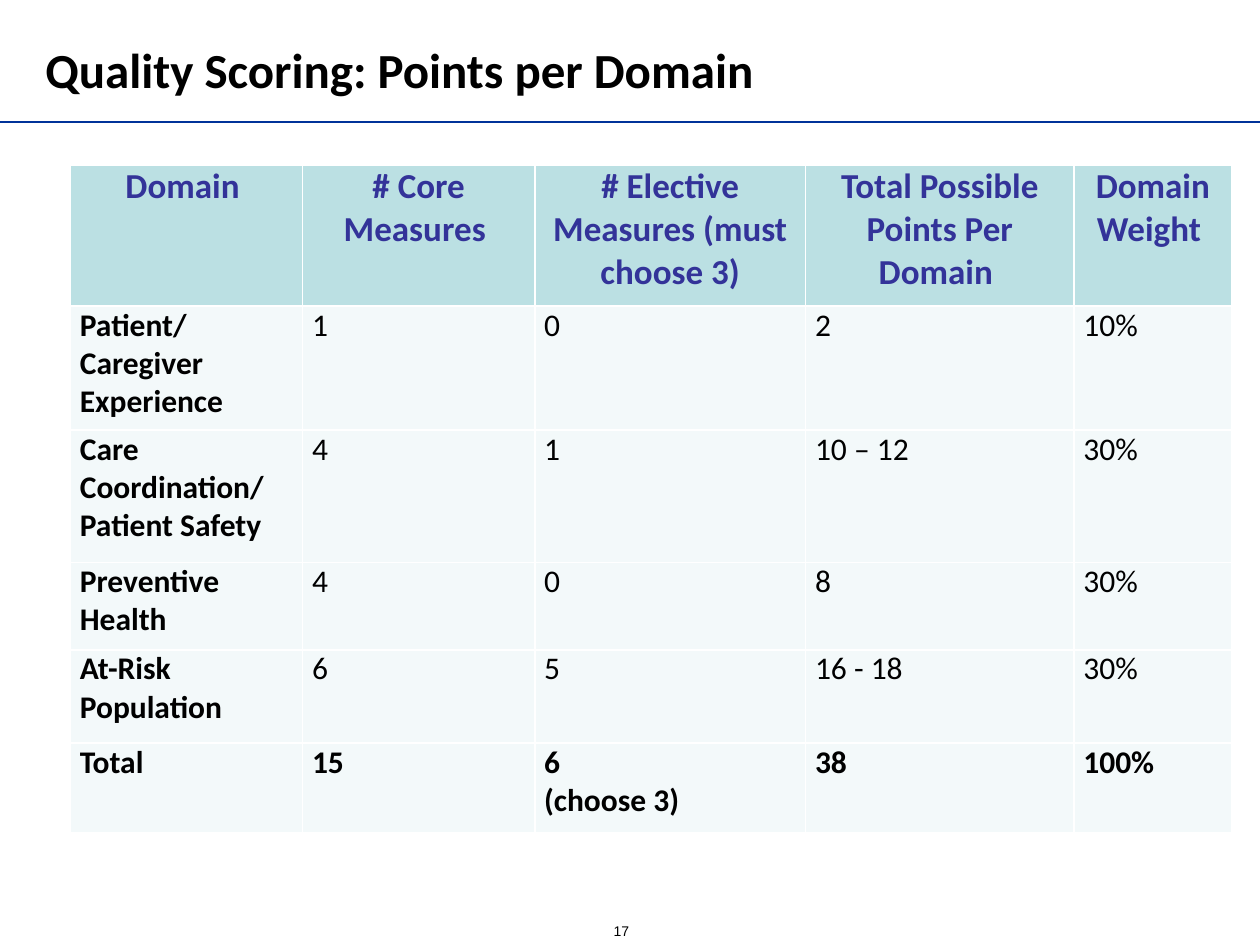
"""Build the slide on quality points per domain."""
from lxml import etree
from pptx import Presentation
from pptx.dml.color import RGBColor
from pptx.enum.shapes import MSO_CONNECTOR
from pptx.enum.text import MSO_ANCHOR, MSO_AUTO_SIZE, PP_ALIGN
from pptx.oxml.ns import qn
from pptx.util import Cm, Pt

LINE = MSO_CONNECTOR.STRAIGHT
MIDDLE = MSO_ANCHOR.MIDDLE
GROW = MSO_AUTO_SIZE.SHAPE_TO_FIT_TEXT
NO_FIT = MSO_AUTO_SIZE.NONE
LEFT, CENTER = PP_ALIGN.LEFT, PP_ALIGN.CENTER

TITLE = "Quality Scoring: Points per Domain"
NUMBER = "17"
HEAD = ["Domain ", "# Core Measures ", "# Elective Measures (must choose 3)",
        "Total Possible Points Per Domain ", "Domain Weight "]
DOMAINS = [
    ["Patient/ Caregiver Experience", "1", "0", "2", "10%"],
    ["Care Coordination/ Patient Safety", "4", "1", "10 – 12", "30%"],
    ["Preventive Health", "4", "0", "8", "30%"],
    ["At-Risk Population", "6", "5", "16 - 18", "30%"],
]
TOTAL = ["Total", "15", "6\n(choose 3)", "38", "100%"]
WIDTHS = [4.68, 4.68, 5.46, 5.41, 3.18]
HEIGHTS = [2.84, 2.5, 2.67, 1.76, 1.88, 1.8]

BLACK, WHITE, RULE = "000000", "FFFFFF", "003399"
HEAD_INK, HEAD_FILL, BODY_FILL = "333399", "BBE0E3", "F3F9FA"


def color(code):
    return RGBColor.from_string(code)


def write(frame, text, size, ink=BLACK, bold=False, face="Calibri", align=LEFT):
    for i, line in enumerate(text.split("\n")):
        para = frame.add_paragraph() if i else frame.paragraphs[0]
        para.alignment = align
        run = para.add_run()
        run.text = line
        font = run.font
        font.name, font.size, font.bold = face, Pt(size), bold
        font.color.rgb = color(ink)


def border(cell, code, width):
    props = cell._tc.get_or_add_tcPr()
    for i, side in enumerate(("lnL", "lnR", "lnT", "lnB")):
        edge = etree.Element(qn("a:" + side), w=str(Pt(width)))
        fill = etree.SubElement(edge, qn("a:solidFill"))
        etree.SubElement(fill, qn("a:srgbClr"), val=code)
        props.insert(i, edge)


def add_title(slide):
    title = slide.shapes.title
    title.left, title.top = Cm(0.66), Cm(0.36)
    title.width, title.height = Cm(19.3), Cm(2.06)
    frame = title.text_frame
    frame.vertical_anchor, frame.auto_size = MIDDLE, NO_FIT
    write(frame, TITLE, 28, bold=True)


def add_rule(slide, width):
    rule = slide.shapes.add_connector(LINE, 0, Cm(2.46), width, Cm(2.46))
    rule.line.color.rgb = color(RULE)
    rule.line.width = Pt(1.5)
    etree.SubElement(rule._element.spPr, qn("a:effectLst"))


def add_number(slide):
    box = slide.shapes.add_textbox(Cm(12.12), Cm(18.47), Cm(0.86), Cm(0.58))
    frame = box.text_frame
    frame.word_wrap, frame.auto_size = False, GROW
    write(frame, NUMBER, 8, face="Arial")


def add_scores(slide):
    rows = [HEAD, *DOMAINS, TOTAL]
    table = slide.shapes.add_table(
        len(rows), len(HEAD), Cm(1.42), Cm(3.33),
        Cm(sum(WIDTHS)), Cm(sum(HEIGHTS))).table
    for col, width in zip(table.columns, WIDTHS):
        col.width = Cm(width)
    for r, (row, height) in enumerate(zip(rows, HEIGHTS)):
        table.rows[r].height = Cm(height)
        for c, text in enumerate(row):
            cell = table.cell(r, c)
            cell.margin_left = cell.margin_right = Cm(0.19)
            cell.margin_top = cell.margin_bottom = 0
            cell.fill.solid()
            cell.fill.fore_color.rgb = color(BODY_FILL if r else HEAD_FILL)
            border(cell, WHITE, 1)
            if row is HEAD:
                write(cell.text_frame, text, 20, HEAD_INK, True, align=CENTER)
            else:
                write(cell.text_frame, text, 18, bold=c == 0 or row is TOTAL)


def main():
    deck = Presentation()
    deck.slide_width, deck.slide_height = Cm(25.4), Cm(19.05)
    slide = deck.slides.add_slide(deck.slide_layouts[5])
    add_rule(slide, deck.slide_width)
    add_number(slide)
    add_scores(slide)
    add_title(slide)
    deck.save("out.pptx")


if __name__ == "__main__":
    main()
